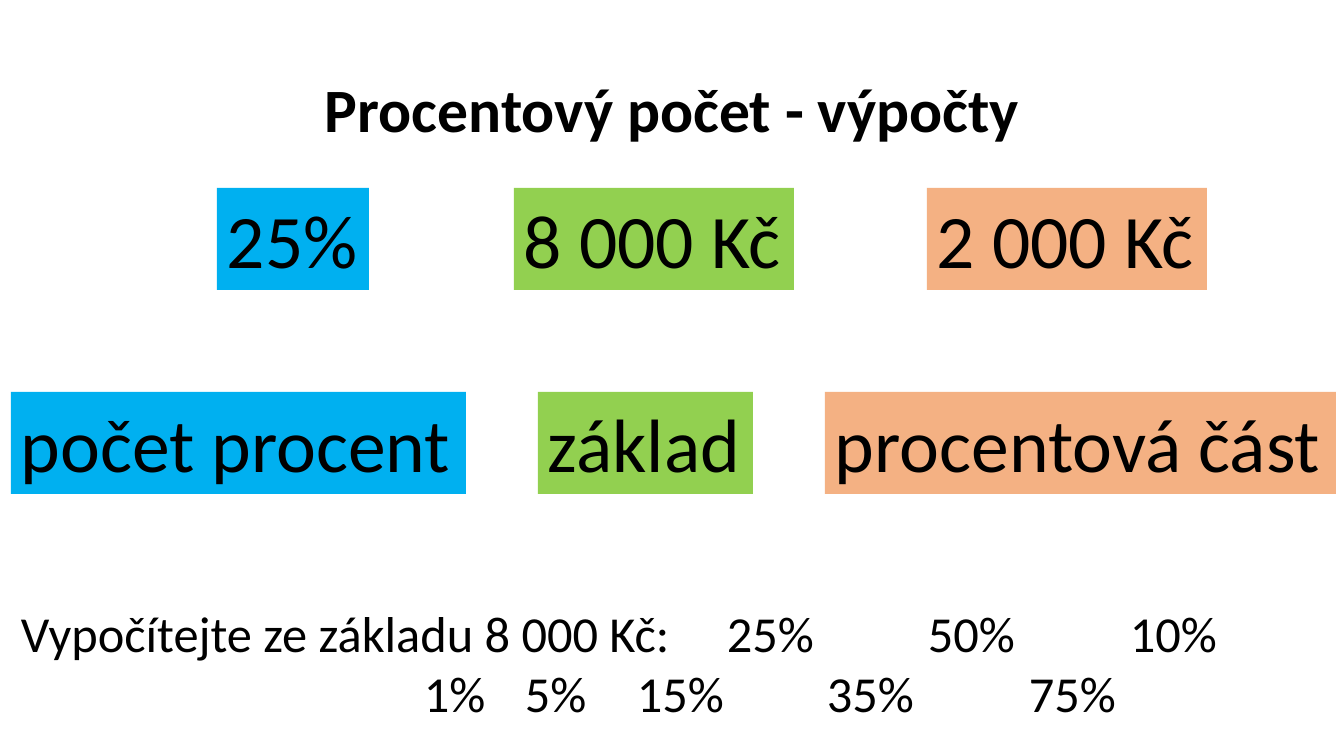
from pptx import Presentation
from pptx.dml.color import RGBColor
from pptx.enum.text import MSO_ANCHOR, MSO_AUTO_SIZE as FIT, PP_ALIGN
from pptx.oxml.ns import qn
from pptx.util import Emu, Pt
from lxml.etree import SubElement

BLACK = RGBColor(0x00, 0x00, 0x00)
BLUE = RGBColor(0x00, 0xB0, 0xF0)
GREEN = RGBColor(0x92, 0xD0, 0x50)
PEACH = RGBColor(0xF4, 0xB1, 0x83)
FONT = "Calibri"

TITLE = "Procentový počet - výpočty"
ROW_H = 102
ROWS = [
    (188, [("25%", 217, 152, BLUE),
           ("8 000 Kč", 514, 280, GREEN),
           ("2 000 Kč", 927, 280, PEACH)]),
    (392, [("počet procent", 11, 455, BLUE),
           ("základ", 538, 215, GREEN),
           ("procentová část", 825, 511, PEACH)]),
]
TASK = [
    ("Vypočítejte ze základu 8 000 Kč:",
     [("25%", 706), ("50%", 907), ("10%", 1109)]),
    ("", [("1%", 403), ("5%", 504), ("15%", 616), ("35%", 806), ("75%", 1008)]),
]


def px(n):
    return Emu(round(n * 914400 / 100.8))


def add_run(p, text, size, bold=False):
    r = p.add_run()
    r.text = text
    r.font.name = FONT
    r.font.size = Pt(size)
    r.font.bold = bold
    r.font.color.rgb = BLACK


def add_box(s, x, y, w, h, wrap):
    box = s.shapes.add_textbox(px(x), px(y), px(w), px(h))
    box.text_frame.word_wrap = wrap
    box.text_frame.auto_size = FIT.SHAPE_TO_FIT_TEXT
    return box


def set_tabs(p, stops):
    tabs = SubElement(p._p.get_or_add_pPr(), qn("a:tabLst"))
    for stop in stops:
        SubElement(tabs, qn("a:tab"), pos=str(px(stop)), algn="l")


def add_title(s):
    title = s.shapes.title
    title.left, title.top, title.width, title.height = map(px, (93, 40, 1159, 146))
    tf = title.text_frame
    tf.word_wrap = True
    tf.auto_size = FIT.NONE
    tf.vertical_anchor = MSO_ANCHOR.MIDDLE
    p = tf.paragraphs[0]
    p.alignment = PP_ALIGN.CENTER
    p.line_spacing = 0.9
    add_run(p, TITLE, 44, bold=True)


def add_cards(s):
    for y, cards in ROWS:
        for text, x, w, color in cards:
            card = add_box(s, x, y, w, ROW_H, False)
            card.fill.solid()
            card.fill.fore_color.rgb = color
            add_run(card.text_frame.paragraphs[0], text, 54)


def add_task(s):
    tf = add_box(s, 11, 597, 1325, 132, True).text_frame
    for i, (lead, values) in enumerate(TASK):
        p = tf.add_paragraph() if i else tf.paragraphs[0]
        set_tabs(p, [stop for _, stop in values])
        add_run(p, lead + "".join("\t" + value for value, _ in values), 36)


def main():
    prs = Presentation()
    prs.slide_width, prs.slide_height = px(1344), px(756)
    s = prs.slides.add_slide(prs.slide_layouts[5])
    add_title(s)
    add_cards(s)
    add_task(s)
    prs.save("out.pptx")


if __name__ == "__main__":
    main()
